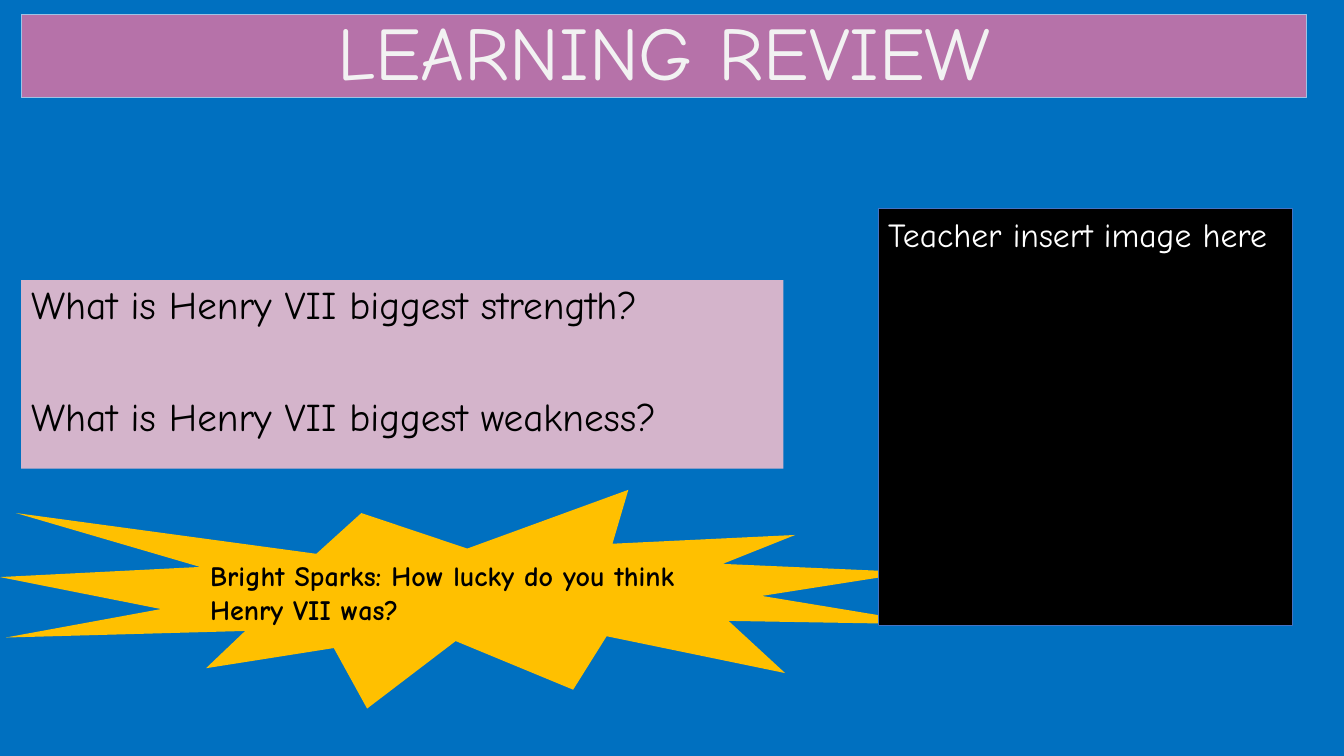
from pptx import Presentation
from pptx.dml.color import RGBColor
from pptx.enum.shapes import MSO_SHAPE as Preset
from pptx.enum.text import MSO_ANCHOR as Anchor, MSO_AUTO_SIZE as AutoSize, PP_ALIGN as Align
from pptx.oxml.xmlchemy import OxmlElement
from pptx.util import Inches, Pt

FONT = "Comic Neue"
BLUE = RGBColor(0x00, 0x70, 0xC0)
MAUVE = RGBColor(0xB6, 0x72, 0xA9)
PALE_MAUVE = RGBColor(0xD4, 0xB4, 0xCB)
PALE_BLUE = RGBColor(0x9D, 0xC3, 0xE6)
EDGE_BLUE = RGBColor(0x44, 0x72, 0xC4)
GOLD = RGBColor(0xFF, 0xC0, 0x00)
OFF_WHITE = RGBColor(0xF2, 0xF2, 0xF2)
WHITE = RGBColor(0xFF, 0xFF, 0xFF)
BLACK = RGBColor(0x00, 0x00, 0x00)


def paint(panel, fill, line=None):
    panel.fill.solid()
    panel.fill.fore_color.rgb = fill
    if line is None:
        panel.line.fill.background()
    else:
        panel.line.color.rgb = line
        panel.line.width = Pt(0.75)


def place(placeholder, left, top, width, height):
    placeholder.left, placeholder.top = Inches(left), Inches(top)
    placeholder.width, placeholder.height = Inches(width), Inches(height)


def write(panel, *lines, size, color, bold=False, align=Align.LEFT,
          anchor=Anchor.TOP, spacing=1.0, before=0, gap=0):
    frame = panel.text_frame
    frame.word_wrap = True
    frame.auto_size = AutoSize.NONE
    frame.vertical_anchor = anchor
    for index, line in enumerate(lines):
        paragraph = frame.add_paragraph() if index else frame.paragraphs[0]
        paragraph.alignment = align
        paragraph.line_spacing = spacing
        paragraph.space_before = Pt(gap if index else before)
        run = paragraph.add_run()
        run.text = line
        run.font.name, run.font.size, run.font.bold = FONT, Pt(size), bold
        run.font.color.rgb = color


def remove_bullets(panel):
    for paragraph in panel.text_frame.paragraphs:
        properties = paragraph._p.get_or_add_pPr()
        properties.set("marL", "0")
        properties.set("indent", "0")
        properties.append(OxmlElement("a:buNone"))


def add_panel(slide, preset, left, top, width, height, fill, line=None):
    panel = slide.shapes.add_shape(preset, Inches(left), Inches(top), Inches(width), Inches(height))
    panel.shadow.inherit = False
    paint(panel, fill, line)
    return panel


def main():
    """Build the learning review slide."""
    deck = Presentation()
    deck.slide_width, deck.slide_height = Inches(13.33), Inches(7.5)
    slide = deck.slides.add_slide(deck.slide_layouts[1])
    slide.background.fill.solid()
    slide.background.fill.fore_color.rgb = BLUE

    heading = slide.shapes.title
    place(heading, 0.21, 0.14, 12.75, 0.83)
    paint(heading, MAUVE, PALE_BLUE)
    write(heading, "LEARNING REVIEW", size=54, color=OFF_WHITE,
          align=Align.CENTER, anchor=Anchor.MIDDLE, spacing=0.9)

    questions = slide.placeholders[1]
    place(questions, 0.21, 2.78, 7.56, 1.87)
    paint(questions, PALE_MAUVE)
    write(questions, "What is Henry VII biggest strength?", "What is Henry VII biggest weakness?",
          size=28, color=BLACK, spacing=0.9, before=10, gap=50)
    remove_bullets(questions)

    spark = add_panel(slide, Preset.EXPLOSION1, 0, 4.86, 9.27, 2.17, GOLD)
    write(spark, "Bright Sparks: How lucky do you think Henry VII was?", size=20, color=BLACK, bold=True)

    image_space = add_panel(slide, Preset.RECTANGLE, 8.71, 2.07, 4.11, 4.14, BLACK, EDGE_BLUE)
    write(image_space, "Teacher insert image here", size=24, color=WHITE)

    deck.save("out.pptx")


if __name__ == "__main__":
    main()
